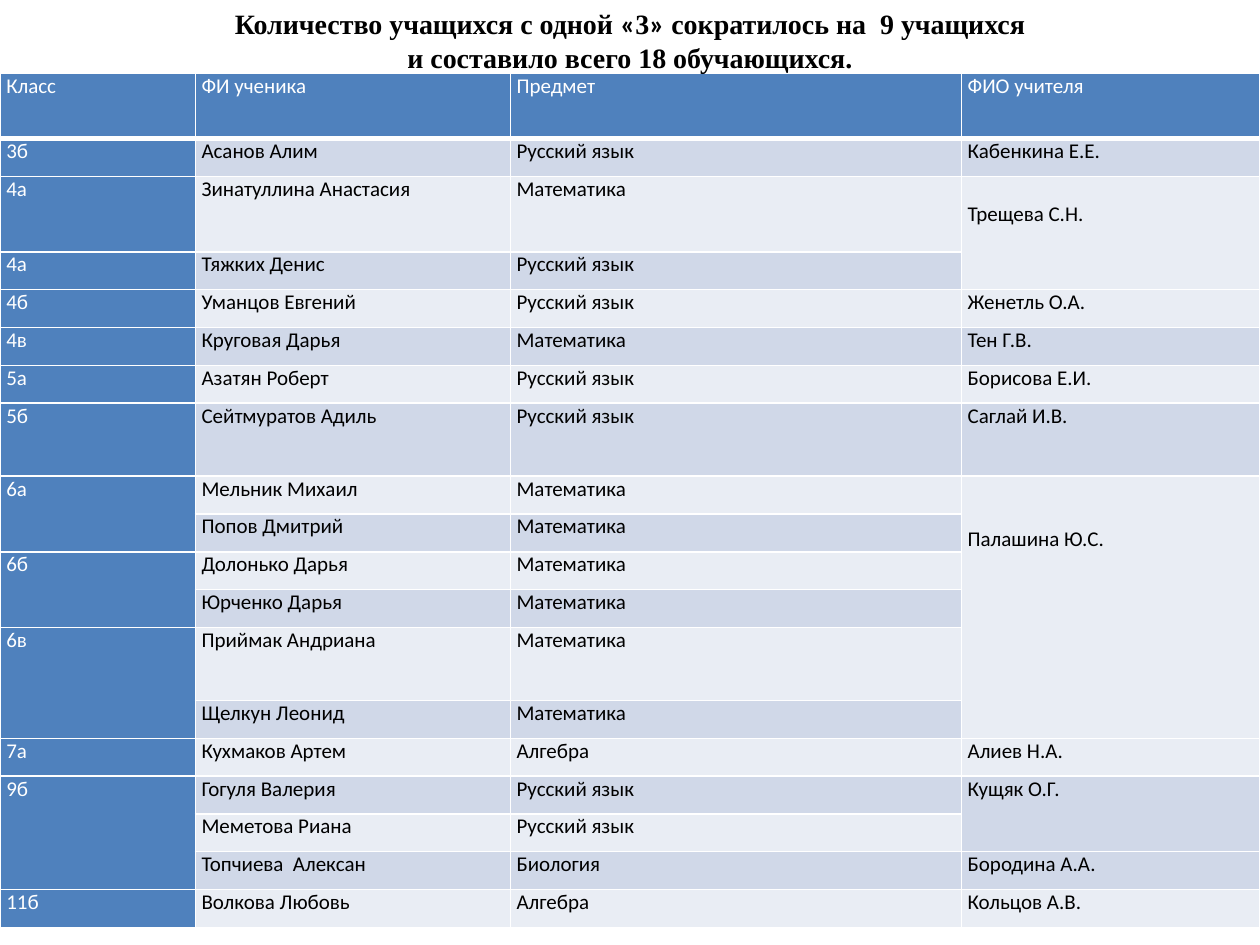
from lxml.etree import SubElement
from pptx import Presentation
from pptx.dml.color import RGBColor
from pptx.enum.text import MSO_ANCHOR, MSO_AUTO_SIZE, PP_ALIGN
from pptx.oxml.ns import qn
from pptx.util import Inches, Pt

WIDE, HIGH = 10, 7.5
COLS = [1.55, 2.5, 3.58, 2.37]
ROW = 0.3
TALL = {0: 0.52, 2: 0.6, 7: 0.58, 12: 0.58}
LINE = 0.2
INKS = {"head": "4F81BD", "dark": "D0D8E8", "light": "E9EDF4",
        "white": "FFFFFF", "black": "000000"}

TITLE = [
    [("Количество учащихся с одной ", "Times New Roman"), ("«", "Calibri"),
     ("3", "Times New Roman"), ("»", "Calibri"),
     (" сократилось на  9 учащихся", "Times New Roman")],
    [("и составило всего 18 обучающихся.", "Times New Roman")],
]

RUS, MATH, ALG = "Русский язык", "Математика", "Алгебра"
# None joins a cell to the one above it
DATA = [
    ("Класс", "ФИ ученика", "Предмет", "ФИО учителя"),
    ("3б", "Асанов Алим", RUS, "Кабенкина Е.Е."),
    ("4а", "Зинатуллина Анастасия", MATH, "Трещева С.Н."),
    ("4а", "Тяжких Денис", RUS, None),
    ("4б", "Уманцов Евгений", RUS, "Женетль О.А."),
    ("4в", "Круговая Дарья", MATH, "Тен Г.В."),
    ("5а", "Азатян Роберт", RUS, "Борисова Е.И."),
    ("5б", "Сейтмуратов Адиль", RUS, "Саглай И.В."),
    ("6а", "Мельник Михаил", MATH, "Палашина Ю.С."),
    (None, "Попов Дмитрий", MATH, None),
    ("6б", "Долонько Дарья", MATH, None),
    (None, "Юрченко Дарья", MATH, None),
    ("6в", "Приймак Андриана", MATH, None),
    (None, "Щелкун Леонид", MATH, None),
    ("7а", "Кухмаков Артем", ALG, "Алиев Н.А."),
    ("9б", "Гогуля Валерия", RUS, "Кущяк О.Г."),
    (None, "Меметова Риана", RUS, None),
    (None, "Топчиева  Алексан", "Биология", "Бородина А.А."),
    ("11б", "Волкова Любовь", ALG, "Кольцов А.В."),
]
# Lines by which a teacher's name is lowered in a joined cell
DROP = {(2, 3): 1, (8, 3): 2}


def write(par, text, font="Calibri", size=12, ink="black", bold=False,
          align=PP_ALIGN.JUSTIFY):
    par.alignment = align
    run = par.add_run()
    run.text = text
    run.font.name, run.font.size, run.font.bold = font, Pt(size), bold
    run.font.color.rgb = RGBColor.from_string(INKS[ink])


def edge(cell, base=1):
    props = cell._tc.get_or_add_tcPr()
    for side, width in (("L", 1), ("R", 1), ("T", 1), ("B", base)):
        line = SubElement(props, qn(f"a:ln{side}"), w=str(Pt(width)))
        fill = SubElement(line, qn("a:solidFill"))
        SubElement(fill, qn("a:srgbClr"), val=INKS["white"])


def paint(cell, row, col):
    edge(cell, base=1 if row else 3)
    cell.margin_left = cell.margin_right = Inches(0.05)
    cell.margin_top = Inches(LINE * DROP.get((row, col), 0))
    cell.margin_bottom = 0
    tone = "head" if row == 0 or col == 0 else "dark" if row % 2 else "light"
    cell.fill.solid()
    cell.fill.fore_color.rgb = RGBColor.from_string(INKS[tone])
    return "white" if tone == "head" else "black"


def join(grid, col):
    # Merge each run of None with the named cell above it
    starts = [r for r, line in enumerate(DATA) if line[col] is not None]
    for top, end in zip(starts, starts[1:] + [len(DATA)]):
        if end - top > 1:
            grid.cell(top, col).merge(grid.cell(end - 1, col))


def add_grid(slide):
    tall = [TALL.get(r, ROW) for r in range(len(DATA))]
    grid = slide.shapes.add_table(
        len(DATA), len(COLS), 0, Inches(0.58),
        Inches(WIDE), Inches(sum(tall))).table
    for col, width in zip(grid.columns, COLS):
        col.width = Inches(width)
    for row, height in zip(grid.rows, tall):
        row.height = Inches(height)
    for r, line in enumerate(DATA):
        for c, text in enumerate(line):
            cell = grid.cell(r, c)
            ink = paint(cell, r, c)
            if text is not None:
                write(cell.text_frame.paragraphs[0], text, ink=ink)
    for c in range(len(COLS)):
        join(grid, c)


def add_title(slide):
    title = slide.shapes.title
    title.left, title.top = 0, 0
    title.width, title.height = Inches(WIDE), Inches(0.64)
    frame = title.text_frame
    frame.word_wrap = True
    frame.auto_size = MSO_AUTO_SIZE.SHAPE_TO_FIT_TEXT
    frame.vertical_anchor = MSO_ANCHOR.MIDDLE
    for n, line in enumerate(TITLE):
        par = frame.add_paragraph() if n else frame.paragraphs[0]
        for text, font in line:
            write(par, text, font=font, size=16, bold=True,
                  align=PP_ALIGN.CENTER)
    # Bring the title in front of the table
    title.element.getparent().append(title.element)


def main():
    deck = Presentation()
    deck.slide_width, deck.slide_height = Inches(WIDE), Inches(HIGH)
    slide = deck.slides.add_slide(deck.slide_layouts[5])
    add_grid(slide)
    add_title(slide)
    deck.save("out.pptx")


if __name__ == "__main__":
    main()
